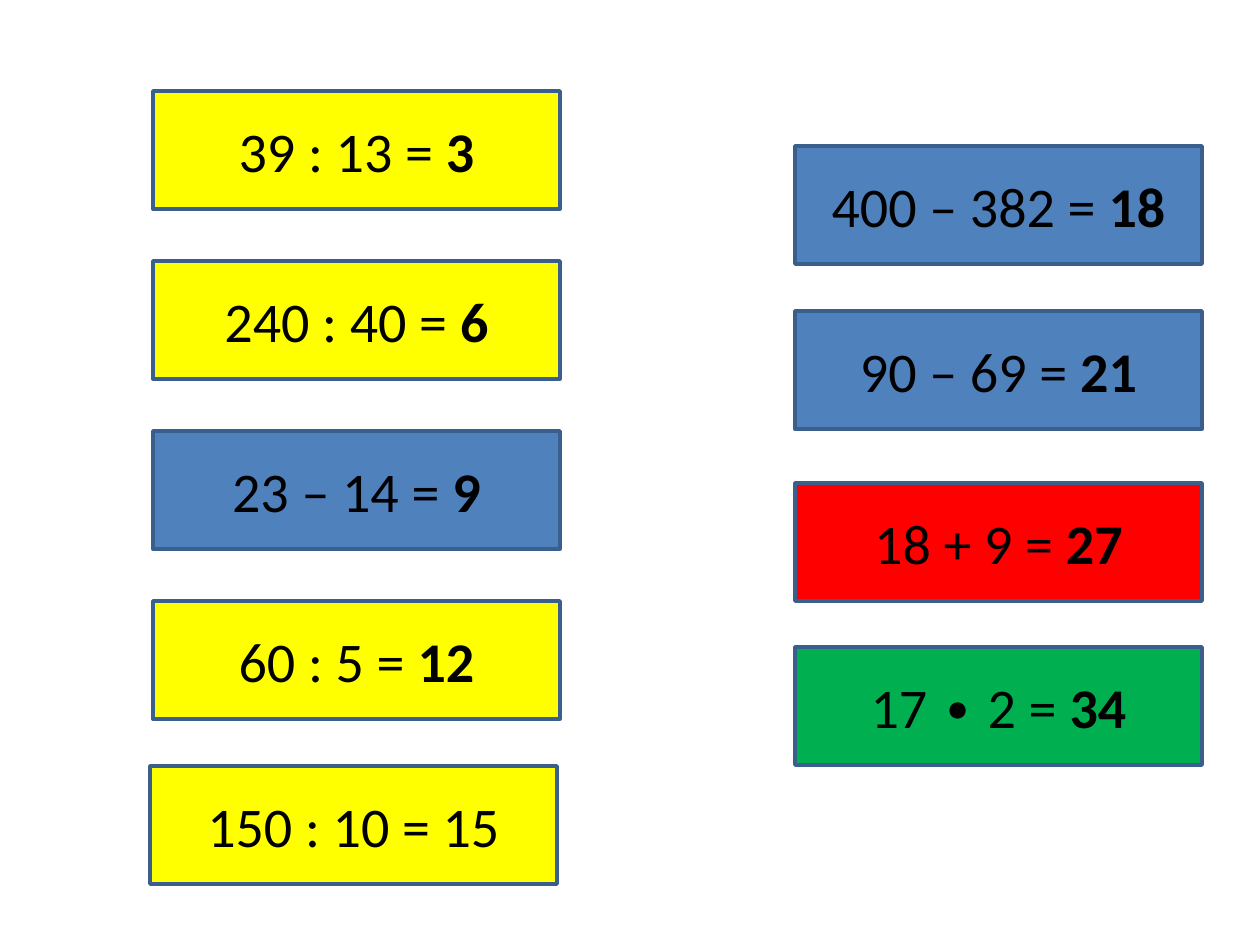
from pptx import Presentation
from pptx.dml.color import RGBColor
from pptx.enum.shapes import MSO_SHAPE
from pptx.enum.text import MSO_ANCHOR, PP_ALIGN
from pptx.util import Pt

RECT = MSO_SHAPE.RECTANGLE
MIDDLE = MSO_ANCHOR.MIDDLE
CENTER = PP_ALIGN.CENTER

YELLOW = RGBColor(0xFF, 0xFF, 0x00)
BLUE = RGBColor(0x4F, 0x81, 0xBD)
RED = RGBColor(0xFF, 0x00, 0x00)
GREEN = RGBColor(0x00, 0xB0, 0x50)
EDGE = RGBColor(0x3A, 0x5F, 0x8C)
BLACK = RGBColor(0x00, 0x00, 0x00)

SCALE = 914400 / 126
CARD_W, CARD_H = 407, 118
LEFT, RIGHT = 153, 795
STEP = 170

CARDS = [
    (LEFT, 91, YELLOW, "39 : 13 = ", "3"),
    (LEFT, 91 + STEP, YELLOW, "240 : 40 = ", "6"),
    (LEFT, 91 + 2 * STEP, BLUE, "23 – 14 = ", "9"),
    (LEFT, 91 + 3 * STEP, YELLOW, "60 : 5 = ", "12"),
    (150, 766, YELLOW, "150 : 10 = 15", ""),
    (RIGHT, 146, BLUE, "400 – 382 = ", "18"),
    (RIGHT, 311, BLUE, "90 – 69 = ", "21"),
    (RIGHT, 483, RED, "18 + 9 = ", "27"),
    (RIGHT, 647, GREEN, "17 ∙ 2 = ", "34"),
]


def px(n):
    """Turn pixels into EMU."""
    return round(n * SCALE)


def add_card(slide, x, y, fill, task, answer):
    """Add a coloured card with a sum and its bold answer."""
    card = slide.shapes.add_shape(RECT, px(x), px(y), px(CARD_W), px(CARD_H))
    card.shadow.inherit = False
    card.fill.solid()
    card.fill.fore_color.rgb = fill
    card.line.color.rgb = EDGE
    card.line.width = Pt(2)
    frame = card.text_frame
    frame.word_wrap = True
    frame.vertical_anchor = MIDDLE
    para = frame.paragraphs[0]
    para.alignment = CENTER
    para.font.name = "Calibri"
    para.font.size = Pt(32)
    para.font.color.rgb = BLACK
    para.add_run().text = task
    if answer:
        run = para.add_run()
        run.text = answer
        run.font.bold = True


def main():
    """Build the slide of sums and save it."""
    deck = Presentation()
    deck.slide_width, deck.slide_height = px(1260), px(945)
    slide = deck.slides.add_slide(deck.slide_layouts[6])
    for card in CARDS:
        add_card(slide, *card)
    deck.save("out.pptx")


if __name__ == "__main__":
    main()
